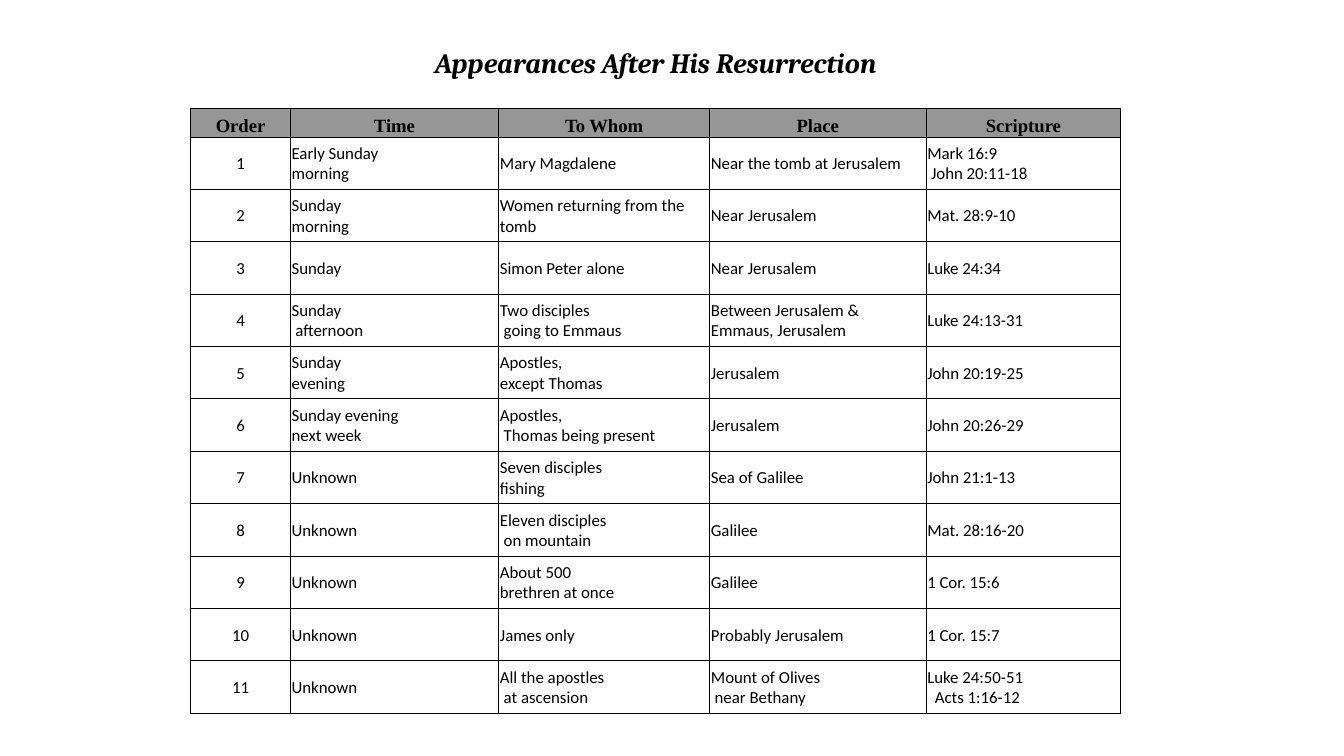
"""Build a one-slide table of the appearances after the resurrection."""
import dataclasses
import pptx
import pptx.dml.color
import pptx.enum.text
import pptx.oxml
import pptx.oxml.ns
import pptx.util

Inches = pptx.util.Inches
Pt = pptx.util.Pt
Color = pptx.dml.color.RGBColor
Align = pptx.enum.text.PP_ALIGN
Anchor = pptx.enum.text.MSO_ANCHOR


@dataclasses.dataclass(frozen=True)
class Theme:
    ink: str = "000000"
    band: str = "969696"
    title: tuple = ("Cambria", 15, True, True)
    head: tuple = ("Times New Roman", 10, True, False)
    body: tuple = ("Calibri", 9, False, False)
    line: float = 0.5
    plain: str = "{2D5ABB26-0587-4C30-8999-92F81FD0307C}"


class Deck:
    def __init__(self, theme, wide, high):
        self.theme = theme
        self.show = pptx.Presentation()
        self.show.slide_width = Inches(wide)
        self.show.slide_height = Inches(high)
        self.slide = self.show.slides.add_slide(self.show.slide_layouts[6])

    def table(self, left, top, cols, rows):
        frame = self.slide.shapes.add_table(
            len(rows), len(cols), Inches(left), Inches(top),
            Inches(sum(cols)), Inches(sum(rows)))
        grid = frame.table
        grid.first_row = grid.horz_banding = False
        grid._tbl.tblPr.find(pptx.oxml.ns.qn("a:tableStyleId")).text = self.theme.plain
        for col, wide in zip(grid.columns, cols):
            col.width = Inches(wide)
        for row, high in zip(grid.rows, rows):
            row.height = Inches(high)
        for cell in grid.iter_cells():
            cell.margin_left = cell.margin_right = cell.margin_top = Inches(0.01)
            cell.margin_bottom = 0
        return grid

    def text(self, cell, words, style, align=Align.LEFT, anchor=Anchor.BOTTOM):
        face, size, bold, slant = style
        cell.vertical_anchor = anchor
        cell.text_frame.text = words
        for para in cell.text_frame.paragraphs:
            para.alignment = align
            for run in para.runs:
                font = run.font
                font.name, font.size = face, Pt(size)
                font.bold, font.italic = bold, slant
                font.color.rgb = Color.from_string(self.theme.ink)

    def blank(self, cell):
        para = cell.text_frame.paragraphs[0]._p
        size = str(self.theme.body[1] * 100)
        para.append(para.makeelement(pptx.oxml.ns.qn("a:endParaRPr"), {"sz": size}))

    def border(self, cell, sides="LRTB"):
        for side in sides:
            cell._tc.get_or_add_tcPr().append(pptx.oxml.parse_xml(
                f'<a:ln{side} {pptx.oxml.ns.nsdecls("a")} w="{Pt(self.theme.line)}">'
                f'<a:solidFill><a:srgbClr val="{self.theme.ink}"/></a:solidFill>'
                f'</a:ln{side}>'))

    def fill(self, cell, color):
        cell.fill.solid()
        cell.fill.fore_color.rgb = Color.from_string(color)


HEADS = ["Order", "Time", "To Whom", "Place", "Scripture"]
EVENTS = [
    ("Early Sunday\nmorning", "Mary Magdalene", "Near the tomb at Jerusalem",
     "Mark 16:9\n John 20:11-18"),
    ("Sunday\nmorning", "Women returning from the tomb", "Near Jerusalem", "Mat. 28:9-10"),
    ("Sunday", "Simon Peter alone", "Near Jerusalem", "Luke 24:34"),
    ("Sunday\n afternoon", "Two disciples\n going to Emmaus",
     "Between Jerusalem & Emmaus, Jerusalem", "Luke 24:13-31"),
    ("Sunday\nevening", "Apostles,\nexcept Thomas", "Jerusalem", "John 20:19-25"),
    ("Sunday evening\nnext week", "Apostles,\n Thomas being present", "Jerusalem",
     "John 20:26-29"),
    ("Unknown", "Seven disciples\nfishing", "Sea of Galilee", "John 21:1-13"),
    ("Unknown", "Eleven disciples\n on mountain", "Galilee", "Mat. 28:16-20"),
    ("Unknown", "About 500\nbrethren at once", "Galilee", "1 Cor. 15:6"),
    ("Unknown", "James only", "Probably Jerusalem", "1 Cor. 15:7"),
    ("Unknown", "All the apostles\n at ascension", "Mount of Olives\n near Bethany",
     "Luke 24:50-51\n  Acts 1:16-12"),
]


def main():
    theme = Theme()
    deck = Deck(theme, 10, 10 * 9 / 16)
    grid = deck.table(1.42, 0.31, [0.74, 1.55, 1.57, 1.61, 1.45],
                      [0.29, 0.21, 0.21] + [0.39] * len(EVENTS))
    title = grid.cell(0, 0)
    title.merge(grid.cell(0, len(HEADS) - 1))
    deck.text(title, "Appearances After His Resurrection", theme.title, Align.CENTER)
    for col, head in enumerate(HEADS):
        if col:
            deck.blank(grid.cell(0, col))
        gap = grid.cell(1, col)
        deck.blank(gap)
        deck.border(gap, "B")
        cell = grid.cell(2, col)
        deck.text(cell, head, theme.head, Align.CENTER)
        deck.border(cell)
        deck.fill(cell, theme.band)
    for order, event in enumerate(EVENTS, 1):
        for col, words in enumerate((str(order), *event)):
            cell = grid.cell(order + 2, col)
            align = Align.LEFT if col else Align.CENTER
            deck.text(cell, words, theme.body, align, Anchor.MIDDLE)
            deck.border(cell)
    deck.show.save("out.pptx")


if __name__ == "__main__":
    main()
